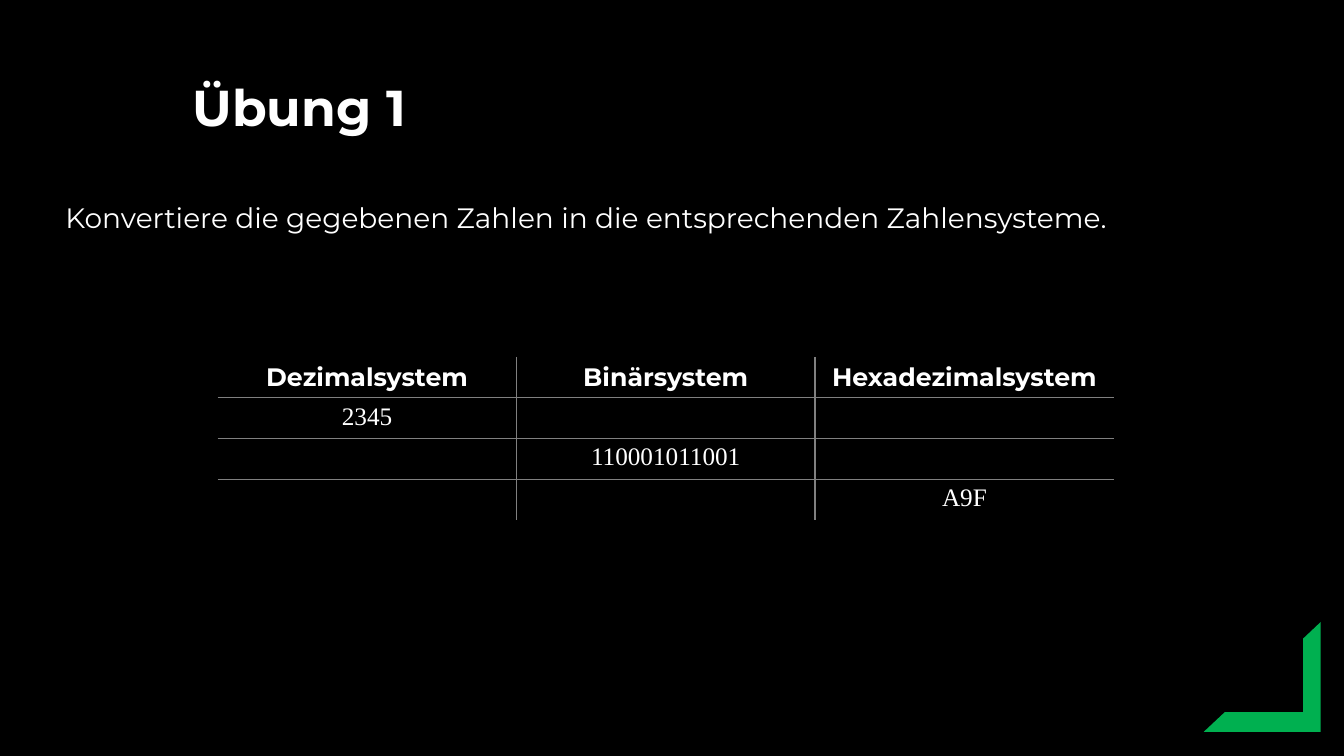
import lxml.etree
import pptx
import pptx.dml.color
import pptx.enum.shapes
import pptx.enum.text
import pptx.oxml.ns
import pptx.util

COLORS = {"background": "000000", "text": "FFFFFF", "rule": "808080", "accent": "00B050"}
HEADING_FONT = "Montserrat"
NUMBER_FONT = "Times New Roman"

NUMBER_SYSTEMS = [
    ["Dezimalsystem", "Binärsystem", "Hexadezimalsystem"],
    ["2345", "", ""],
    ["", "110001011001", ""],
    ["", "", "A9F"],
]


def rgb(role):
    return pptx.dml.color.RGBColor.from_string(COLORS[role])


class ExerciseSlide:
    """Places elements on a grid of 100 columns by 100 rows."""

    def __init__(self, presentation):
        self.column = presentation.slide_width / 100
        self.row = presentation.slide_height / 100
        self.slide = presentation.slides.add_slide(presentation.slide_layouts[6])
        self.fill(self.slide.background, "background")

    def area(self, left, top, width, height):
        return (round(left * self.column), round(top * self.row),
                round(width * self.column), round(height * self.row))

    def fill(self, target, role):
        target.fill.solid()
        target.fill.fore_color.rgb = rgb(role)

    def format_runs(self, paragraph, size, font_name, bold):
        for run in paragraph.runs:
            run.font.size = pptx.util.Pt(size)
            run.font.name = font_name
            run.font.bold = bold
            run.font.color.rgb = rgb("text")

    def text(self, wording, place, size, bold=False):
        frame = self.slide.shapes.add_textbox(*self.area(*place)).text_frame
        frame.word_wrap = True
        frame.text = wording
        frame.paragraphs[0].line_spacing = 0.9
        self.format_runs(frame.paragraphs[0], size, HEADING_FONT, bold)

    def corner(self, place):
        half_frame = self.slide.shapes.add_shape(
            pptx.enum.shapes.MSO_SHAPE.HALF_FRAME, *self.area(*place))
        half_frame.adjustments[0] = 0.18
        half_frame.adjustments[1] = 0.16
        half_frame.rotation = 180
        half_frame.shadow.inherit = False
        self.fill(half_frame, "accent")
        half_frame.line.fill.background()

    def cell_borders(self, cell, ruled_sides):
        """Rule the given sides and clear the others."""
        properties = cell._tc.get_or_add_tcPr()
        for position, side in enumerate("LRTB"):
            border = lxml.etree.Element(pptx.oxml.ns.qn(f"a:ln{side}"), w="12700")
            if side in ruled_sides:
                solid = lxml.etree.SubElement(border, pptx.oxml.ns.qn("a:solidFill"))
                lxml.etree.SubElement(solid, pptx.oxml.ns.qn("a:srgbClr"), val=COLORS["rule"])
            else:
                lxml.etree.SubElement(border, pptx.oxml.ns.qn("a:noFill"))
            properties.insert(position, border)

    def table(self, rows, place):
        last_row, last_column = len(rows) - 1, len(rows[0]) - 1
        grid = self.slide.shapes.add_table(
            len(rows), len(rows[0]), *self.area(*place)).table
        grid.horz_banding = False
        for r, row in enumerate(rows):
            for c, wording in enumerate(row):
                cell = grid.cell(r, c)
                cell.text = wording
                paragraph = cell.text_frame.paragraphs[0]
                paragraph.alignment = pptx.enum.text.PP_ALIGN.CENTER
                is_heading = r == 0
                self.format_runs(paragraph, 18,
                                 HEADING_FONT if is_heading else NUMBER_FONT, is_heading)
                self.fill(cell, "background")
                inner = {"L": c > 0, "R": c < last_column, "T": r > 0, "B": r < last_row}
                self.cell_borders(cell, [side for side, ruled in inner.items() if ruled])


def main():
    presentation = pptx.Presentation()
    presentation.slide_width = pptx.util.Inches(13.33)
    presentation.slide_height = pptx.util.Inches(7.5)

    exercise = ExerciseSlide(presentation)
    exercise.corner((89.57, 82.27, 8.7, 14.53))
    exercise.text("Konvertiere die gegebenen Zahlen in die entsprechenden Zahlensysteme.",
                  (4.13, 26.4, 90.85, 63.33), 20)
    exercise.text("Übung 1", (13.58, 10.27, 81.4, 9.47), 36, bold=True)
    exercise.table(NUMBER_SYSTEMS, (16.2, 47.2, 66.67, 21.6))

    presentation.save("out.pptx")


if __name__ == "__main__":
    main()
